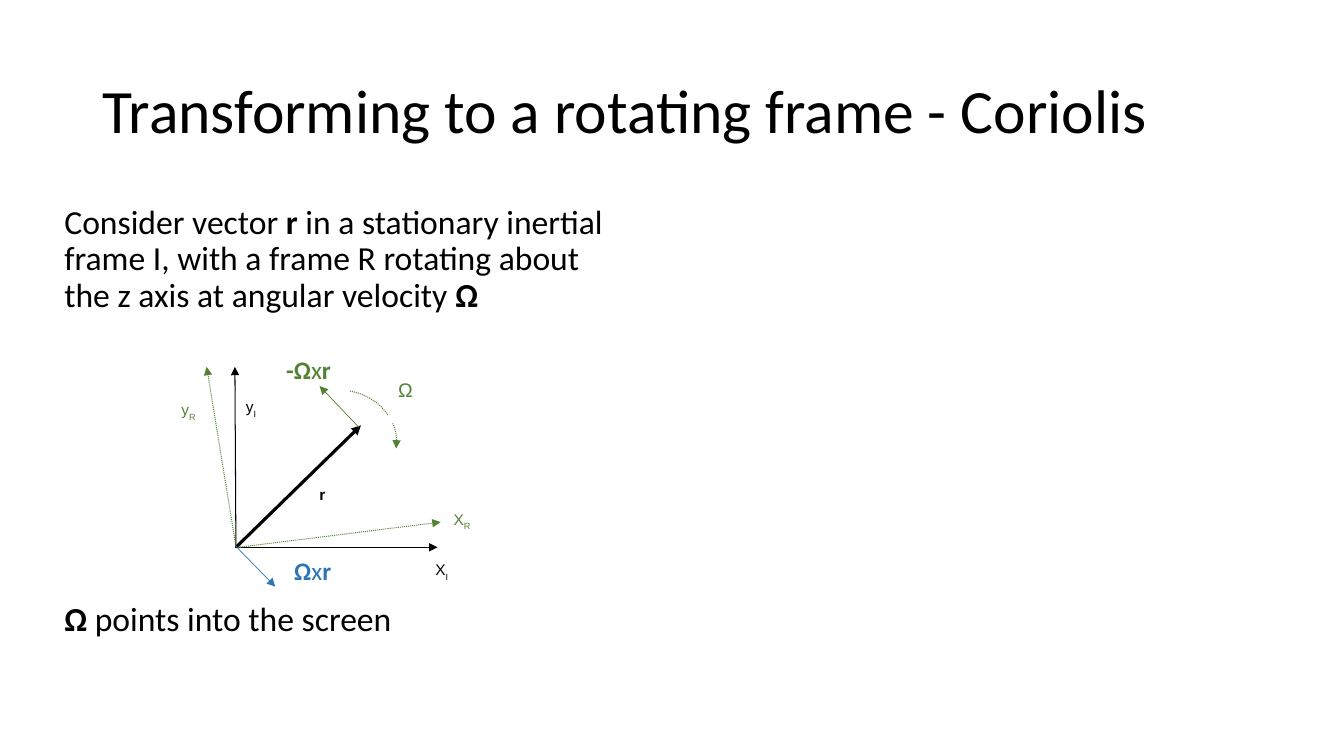
from lxml import etree
from pptx import Presentation
from pptx import util as u
from pptx.dml.color import RGBColor
from pptx.enum import dml, shapes, text
from pptx.oxml.ns import qn

BLACK = RGBColor(0x00, 0x00, 0x00)
WHITE = RGBColor(0xFF, 0xFF, 0xFF)
GREEN = RGBColor(0x54, 0x82, 0x35)
BLUE = RGBColor(0x2E, 0x75, 0xB6)

# Axes and vectors: tail, tip, colour, width in points, dotted
ARROWS = [
    ((0.64, 2.02), (0.63, 0.24), BLACK, 0.75, False),  # y axis, inertial
    ((0.63, 2.03), (2.64, 2.03), BLACK, 0.75, False),  # x axis, inertial
    ((0.64, 2.03), (1.88, 0.82), BLACK, 2.25, False),  # r
    ((0.64, 2.02), (0.35, 0.24), GREEN, 0.75, True),   # y axis, rotating
    ((0.66, 2.03), (2.67, 1.78), GREEN, 0.75, True),   # x axis, rotating
]
VELOCITIES = [
    ((0.64, 2.02), (1.03, 2.42), BLUE, 0.5, False),
    ((1.86, 0.84), (1.47, 0.43), GREEN, 0.5, False),
]

# Labels: box, runs as (words, style), colour
AXIS_LABELS = [
    ((2.52, 2.11, 0.47, 0.43), [("X", ""), ("I", "sub")], BLACK),
    ((2.70, 1.61, 0.58, 0.34), [("X", ""), ("R", "sub")], GREEN),
    ((1.37, 1.36, 0.28, 0.33), [("r", "bold")], BLACK),
    ((0.64, 0.49, 0.35, 0.39), [("y", ""), ("I", "sub")], BLACK),
    ((0.00, 0.52, 0.35, 0.51), [("y", ""), ("R", "sub")], GREEN),
]
OMEGA_BOX = (2.15, 0.30, 0.79, 0.50)
VELOCITY_LABELS = [
    ((1.12, 2.06, 0.77, 0.40), [("Ω", "bold"), ("x", ""), ("r", "bold")], BLUE),
    ((1.04, 0.07, 0.77, 0.40), [("-Ω", "bold"), ("x", ""), ("r", "bold")], GREEN),
]

# Control points of the rotation arc, ending at its arrowhead
ARC = [(1.77, 0.48), (2.06, 0.53), (2.27, 0.78), (2.23, 1.05)]
ARC_STEPS = 16


def add_runs(paragraph, runs, size, font, color):
    for words, style in runs:
        run = paragraph.add_run()
        run.text = words
        formats = {"name": font, "size": u.Pt(size), "bold": style == "bold"}
        for key, value in formats.items():
            setattr(run.font, key, value)
        run.font.color.rgb = color
        if style == "sub":
            run._r.get_or_add_rPr().set("baseline", "-30000")


def add_text_box(slide, box, anchor=text.MSO_ANCHOR.TOP):
    frame = slide.shapes.add_textbox(*map(u.Inches, box)).text_frame
    formats = {"word_wrap": True, "vertical_anchor": anchor}
    for key, value in formats.items():
        setattr(frame, key, value)
    return frame


def style_arrow(line, color, width, dotted):
    line.color.rgb = color
    line.width = u.Pt(width)
    if dotted:
        line.dash_style = dml.MSO_LINE.ROUND_DOT
    etree.SubElement(line._get_or_add_ln(), qn("a:tailEnd"), type="triangle")


def add_arrow(slide, left, top, tail, tip, color, width, dotted):
    ends = [u.Inches(c) for x, y in (tail, tip) for c in (left + x, top + y)]
    arrow = slide.shapes.add_connector(shapes.MSO_CONNECTOR.STRAIGHT, *ends)
    style_arrow(arrow.line, color, width, dotted)
    etree.SubElement(arrow._element.spPr, qn("a:effectLst"))


def add_rotation_arc(slide, left, top):
    points = []
    for step in range(ARC_STEPS + 1):
        t = step / ARC_STEPS
        weights = ((1 - t) ** 3, 3 * t * (1 - t) ** 2, 3 * t * t * (1 - t), t ** 3)
        x, y = (sum(w * p[axis] for w, p in zip(weights, ARC)) for axis in (0, 1))
        points.append((u.Inches(left + x), u.Inches(top + y)))
    builder = slide.shapes.build_freeform(*points[0])
    builder.add_line_segments(points[1:], close=False)
    arc = builder.convert_to_shape()
    arc.shadow.inherit = False
    arc.fill.background()
    style_arrow(arc.line, GREEN, 0.75, True)


def add_label(slide, left, top, box, runs, color, size=11):
    x, y, width, height = box
    place = map(u.Inches, (left + x, top + y, width, height))
    label = slide.shapes.add_shape(shapes.MSO_SHAPE.RECTANGLE, *place)
    label.shadow.inherit = False
    label.fill.solid()
    label.fill.fore_color.rgb = WHITE
    label.line.fill.background()
    frame = label.text_frame
    frame.word_wrap = True
    frame.vertical_anchor = text.MSO_ANCHOR.TOP
    frame.paragraphs[0].alignment = text.PP_ALIGN.LEFT
    add_runs(frame.paragraphs[0], runs, size, "Arial", color)


def add_title(slide, box):
    paragraph = add_text_box(slide, box, text.MSO_ANCHOR.MIDDLE).paragraphs[0]
    paragraph.line_spacing = 0.9
    heading = [("Transforming to a rotating frame - Coriolis", "")]
    add_runs(paragraph, heading, 44, "Calibri", BLACK)


def add_explanation(slide, box):
    frame = add_text_box(slide, box)
    setup = [
        ("Consider vector ", ""),
        ("r ", "bold"),
        ("in a stationary inertial frame I, with a frame R rotating about "
         "the z axis at angular velocity ", ""),
        ("Ω", "bold"),
    ]
    direction = [("Ω ", "bold"), ("points into the screen", "")]
    # The wide gap leaves room for the diagram
    for paragraph, runs, gap in (
        (frame.paragraphs[0], setup, 10),
        (frame.add_paragraph(), direction, 206),
    ):
        paragraph.line_spacing = 0.9
        paragraph.space_before = u.Pt(gap)
        add_runs(paragraph, runs, 24, "Calibri", BLACK)


def add_diagram(slide, left, top):
    # Axes and position vector
    for arrow in ARROWS:
        add_arrow(slide, left, top, *arrow)
    for label in AXIS_LABELS:
        add_label(slide, left, top, *label)
    # Rotation
    add_rotation_arc(slide, left, top)
    add_label(slide, left, top, OMEGA_BOX, [("Ω", "")], GREEN, size=14)
    # Velocities
    for arrow in VELOCITIES:
        add_arrow(slide, left, top, *arrow)
    for (x, y, width, height), runs, color in VELOCITY_LABELS:
        frame = add_text_box(slide, (left + x, top + y, width, height))
        add_runs(frame.paragraphs[0], runs, 18, "Calibri", color)


def main():
    deck = Presentation()
    deck.slide_width = u.Inches(13.33)
    deck.slide_height = u.Inches(7.5)
    slide = deck.slides.add_slide(deck.slide_layouts[6])
    add_title(slide, (0.92, 0.4, 11.5, 1.45))
    add_explanation(slide, (0.54, 1.99, 5.67, 4.76))
    add_diagram(slide, 1.7, 3.4)
    deck.save("out.pptx")


if __name__ == "__main__":
    main()
